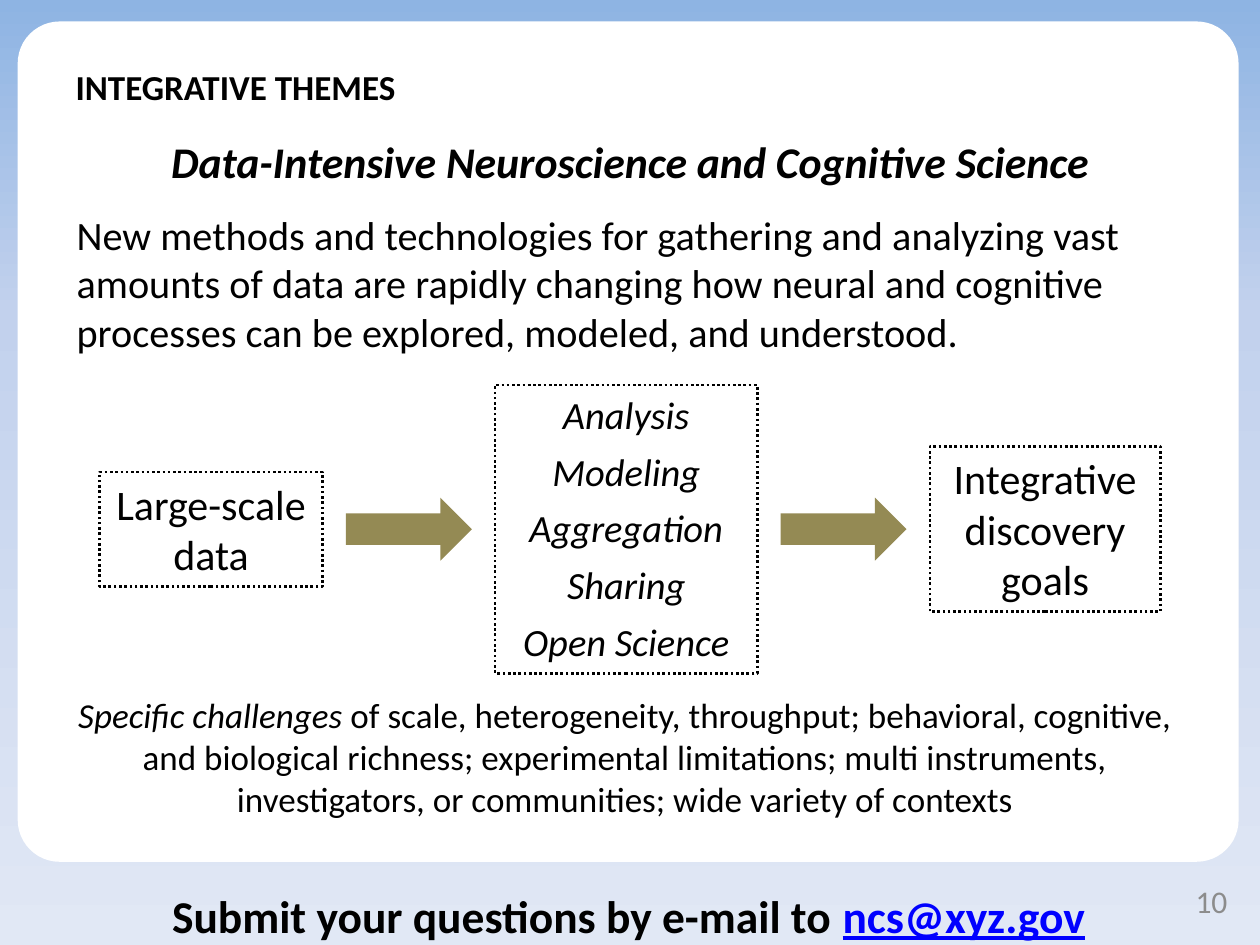
from copy import deepcopy
from dataclasses import dataclass

from pptx import Presentation
from pptx.dml.color import RGBColor
from pptx.enum.dml import MSO_LINE
from pptx.enum.shapes import MSO_SHAPE
from pptx.enum.text import MSO_ANCHOR, PP_ALIGN
from pptx.oxml.ns import qn
from pptx.util import Inches, Pt

LEFT, CENTER, RIGHT = PP_ALIGN.LEFT, PP_ALIGN.CENTER, PP_ALIGN.RIGHT
TOP, MIDDLE = MSO_ANCHOR.TOP, MSO_ANCHOR.MIDDLE
RECTANGLE, ROUNDED = MSO_SHAPE.RECTANGLE, MSO_SHAPE.ROUNDED_RECTANGLE
ARROW, DOTTED = MSO_SHAPE.RIGHT_ARROW, MSO_LINE.ROUND_DOT

FONT = "Calibri"
BLACK, WHITE, GREY, OLIVE, LINK = "000000", "FFFFFF", "8C8C8C", "948A54", "0000FF"
BACKGROUND = [(0, "8EB4E3"), (0.33, "C2D1ED"), (1, "E1E8F5")]
WIDTH, HEIGHT = Inches(10), Inches(7.5)

# The flow row, in percent of the slide
FLOW_LEFT, FLOW_MIDDLE, FLOW_GAP = 7.9, 56, 1.85
ARROW_WIDTH, ARROW_HEIGHT = 10, 6.67


@dataclass
class Area:
    """A rectangle in percent of the slide's width and height."""
    left: float
    top: float
    width: float
    height: float

    def lengths(self) -> tuple:
        return (int(WIDTH * self.left / 100), int(HEIGHT * self.top / 100),
                int(WIDTH * self.width / 100), int(HEIGHT * self.height / 100))


@dataclass
class Span:
    text: str
    size: float
    bold: bool = False
    italic: bool = False
    underline: bool = False
    color: str = BLACK


@dataclass
class TextBlock:
    area: Area
    spans: list[Span]
    align: PP_ALIGN = CENTER
    anchor: MSO_ANCHOR = TOP


@dataclass
class Stage:
    """A dotted box of the flow, with one paragraph per line."""
    width: float
    height: float
    lines: list[Span]
    space_before: float = 0


TITLE = TextBlock(Area(5, 4, 90, 10.4),
                  [Span("INTEGRATIVE THEMES", 20, bold=True)], LEFT, MIDDLE)
TEXT_BLOCKS = [
    TextBlock(Area(5, 13.6, 90, 7.73),
              [Span("Data-Intensive Neuroscience and Cognitive Science", 25,
                    bold=True, italic=True)]),
    TextBlock(Area(5.1, 21.6, 89, 16.67),
              [Span("New methods and technologies for gathering and analyzing vast "
                    "amounts of data are rapidly changing how neural and cognitive "
                    "processes can be explored, modeled, and understood.", 23)], LEFT),
    TextBlock(Area(5.1, 72.75, 89, 14.67),
              [Span("Specific challenges ", 20, italic=True),
               Span("of scale, heterogeneity, throughput; behavioral, cognitive, and "
                    "biological richness; experimental limitations; multi instruments, "
                    "investigators, or communities; wide variety of contexts", 20)]),
    TextBlock(Area(4.9, 93.33, 90, 6.67),
              [Span("Submit your questions by e-mail to ", 26, bold=True),
               Span("ncs@xyz.gov", 26, bold=True, underline=True, color=LINK)]),
    TextBlock(Area(71.7, 92.67, 26.7, 5.33), [Span("10", 18, color=GREY)],
              RIGHT, MIDDLE),
]
ACTIVITIES = ["Analysis", "Modeling", "Aggregation", "Sharing", "Open Science"]
STAGES = [
    Stage(17.7, 12.13, [Span("Large-scale data", 24)]),
    Stage(20.8, 30.53, [Span(name, 22, italic=True) for name in ACTIVITIES], 6),
    Stage(18.3, 17.47, [Span("Integrative discovery goals", 24)]),
]


def rgb(color: str) -> RGBColor:
    return RGBColor.from_string(color)


def add_span(para, span: Span) -> None:
    run = para.add_run()
    run.text = span.text
    font = run.font
    font.name, font.size = FONT, Pt(span.size)
    font.bold, font.italic, font.underline = span.bold, span.italic, span.underline
    font.color.rgb = rgb(span.color)


def write_block(box, block: TextBlock) -> None:
    """Place the box and fill it with one paragraph."""
    box.left, box.top, box.width, box.height = block.area.lengths()
    frame = box.text_frame
    frame.word_wrap = True
    frame.vertical_anchor = block.anchor
    para = frame.paragraphs[0]
    para.alignment = block.align
    for span in block.spans:
        add_span(para, span)


def add_plain_shape(page, kind: MSO_SHAPE, area: Area, fill: str | None = None):
    """Add a shape without shadow or line; no colour means no fill."""
    shape = page.shapes.add_shape(kind, *area.lengths())
    shape.shadow.inherit = False
    shape.line.fill.background()
    if fill:
        shape.fill.solid()
        shape.fill.fore_color.rgb = rgb(fill)
    else:
        shape.fill.background()
    return shape


def add_stage(page, left: float, stage: Stage) -> None:
    area = Area(left, FLOW_MIDDLE - stage.height / 2, stage.width, stage.height)
    box = add_plain_shape(page, RECTANGLE, area)
    box.line.color.rgb = rgb(BLACK)
    box.line.width = Pt(1.5)
    box.line.dash_style = DOTTED
    frame = box.text_frame
    frame.word_wrap = True
    frame.vertical_anchor = TOP
    for index, line in enumerate(stage.lines):
        para = frame.add_paragraph() if index else frame.paragraphs[0]
        para.alignment = CENTER
        para.space_before = Pt(stage.space_before)
        add_span(para, line)


def add_flow(page) -> None:
    """Lay out the stages from left to right with an arrow between neighbours."""
    left = FLOW_LEFT
    for index, stage in enumerate(STAGES):
        if index:
            add_plain_shape(page, ARROW, Area(left, FLOW_MIDDLE - ARROW_HEIGHT / 2,
                                              ARROW_WIDTH, ARROW_HEIGHT), OLIVE)
            left += ARROW_WIDTH + FLOW_GAP
        add_stage(page, left, stage)
        left += stage.width + FLOW_GAP


def paint_background(page) -> None:
    fill = page.background.fill
    fill.gradient()
    fill.gradient_angle = 270
    stop_list = next(page.element.iter(qn("a:gsLst")))
    stop_list.append(deepcopy(stop_list[0]))
    for stop, (position, color) in zip(fill.gradient_stops, BACKGROUND):
        stop.position = position
        stop.color.rgb = rgb(color)


def main() -> None:
    deck = Presentation()
    deck.slide_width, deck.slide_height = WIDTH, HEIGHT
    page = deck.slides.add_slide(deck.slide_layouts.get_by_name("Title Only"))
    paint_background(page)

    panel = add_plain_shape(page, ROUNDED, Area(1.4, 2.27, 96.9, 88.93), WHITE)
    panel.adjustments[0] = 0.05
    title = page.shapes.title
    title.element.addprevious(panel.element)
    write_block(title, TITLE)

    for block in TEXT_BLOCKS:
        write_block(page.shapes.add_textbox(*block.area.lengths()), block)
    add_flow(page)
    deck.save("out.pptx")


if __name__ == "__main__":
    main()
